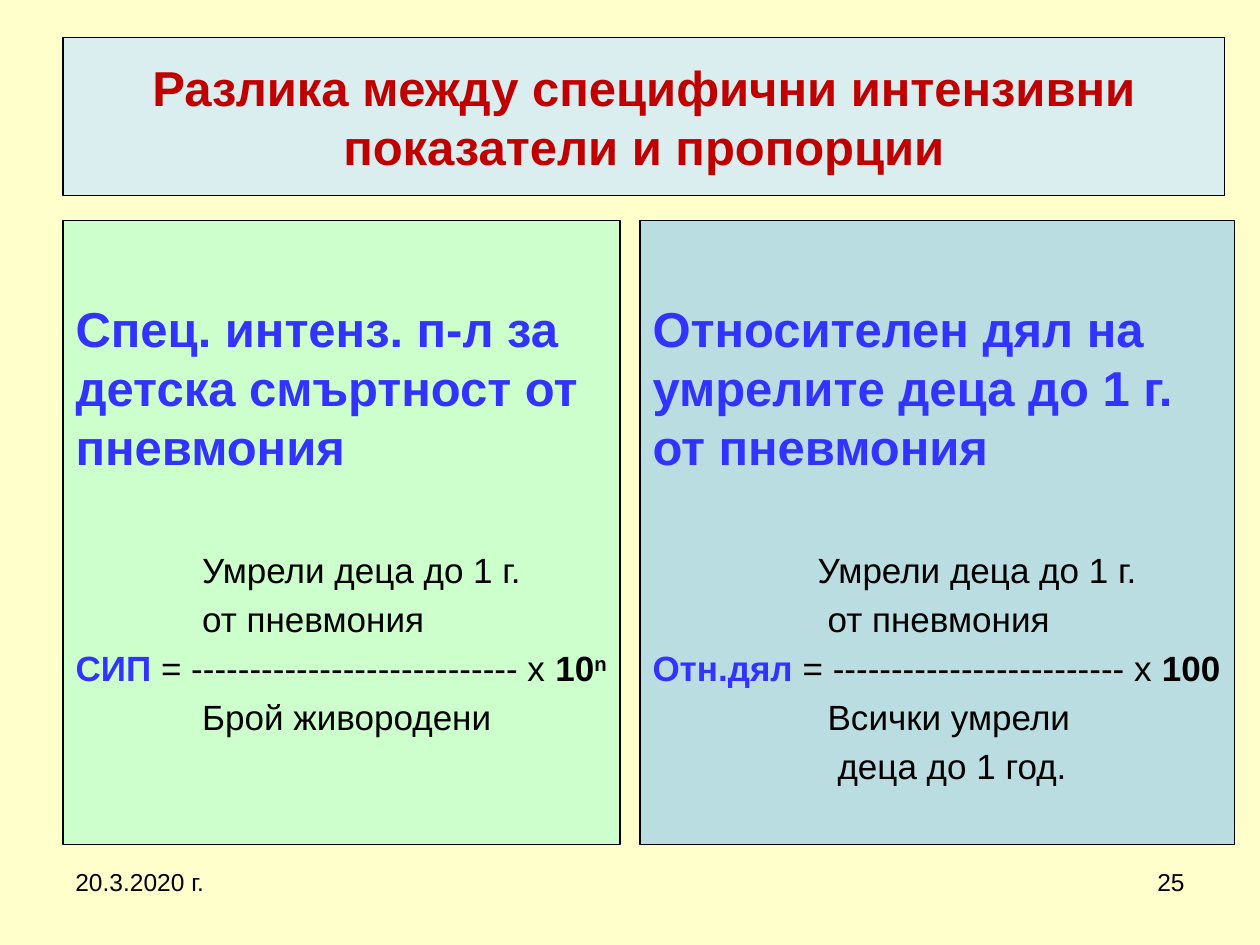
"""Build a slide comparing specific intensive rates with proportions."""
from lxml import etree
from pptx import Presentation
from pptx.dml.color import RGBColor
from pptx.enum.text import MSO_ANCHOR, MSO_AUTO_SIZE, PP_ALIGN
from pptx.oxml.ns import qn
from pptx.util import Cm, Pt

LEFT, CENTER, RIGHT = PP_ALIGN.LEFT, PP_ALIGN.CENTER, PP_ALIGN.RIGHT
TOP, MIDDLE = MSO_ANCHOR.TOP, MSO_ANCHOR.MIDDLE
NO_AUTOFIT = MSO_AUTO_SIZE.NONE
TWO_CONTENT_LAYOUT = 3

CREAM = RGBColor(0xFF, 0xFF, 0xCC)
PALE_BLUE = RGBColor(0xDA, 0xED, 0xEF)
GREEN = RGBColor(0xCC, 0xFF, 0xCC)
TEAL = RGBColor(0xBA, 0xDD, 0xE1)
RED = RGBColor(0xC0, 0x00, 0x00)
BLUE = RGBColor(0x33, 0x33, 0xFF)
BLACK = RGBColor(0x00, 0x00, 0x00)


def add_text(paragraph, text, size=20, color=BLACK, bold=False, superscript=False):
    run = paragraph.add_run()
    run.text = text
    font = run.font
    font.name, font.size, font.bold = "Arial", Pt(size), bold
    font.color.rgb = color
    if superscript:
        run._r.get_or_add_rPr().set("baseline", "30000")


class ComparisonSlide:
    def __init__(self, presentation):
        layout = presentation.slide_layouts[TWO_CONTENT_LAYOUT]
        self.slide = presentation.slides.add_slide(layout)
        self.slide.background.fill.solid()
        self.slide.background.fill.fore_color.rgb = CREAM

    def place(self, index, box, fill, anchor):
        shape = self.slide.placeholders[index]
        shape.left, shape.top, shape.width, shape.height = map(Cm, box)
        shape.fill.solid()
        shape.fill.fore_color.rgb = fill
        shape.line.color.rgb = BLACK
        shape.line.width = Pt(0.75)
        frame = shape.text_frame
        frame.word_wrap = True
        frame.auto_size = NO_AUTOFIT
        frame.vertical_anchor = anchor
        return frame

    def title(self, text, box):
        paragraph = self.place(0, box, PALE_BLUE, MIDDLE).paragraphs[0]
        paragraph.alignment = CENTER
        add_text(paragraph, text, size=28, color=RED, bold=True)

    def panel(self, index, box, fill, heading, formula):
        frame = self.place(index, box, fill, TOP)
        frame.margin_top = Cm(1.57)
        frame.margin_right = 0
        paragraph = self.line(frame.paragraphs[0], 0, 0)
        add_text(paragraph, heading, size=28, color=BLUE, bold=True)
        for number, (indent, runs) in enumerate(formula):
            space = 4 if number else 42
            paragraph = self.line(frame.add_paragraph(), indent, space)
            for text, style in runs:
                add_text(paragraph, text, **style)

    def line(self, paragraph, indent, space):
        paragraph.alignment = LEFT
        paragraph.space_before = Pt(space)
        properties = paragraph._p.get_or_add_pPr()
        properties.set("marL", str(Cm(indent)))
        properties.set("indent", "0")
        etree.SubElement(properties, qn("a:buNone"))
        return paragraph

    def footer(self, text, left, alignment):
        box = self.slide.shapes.add_textbox(Cm(left), Cm(17.35), Cm(5.92), Cm(1.32))
        box.text_frame.word_wrap = True
        paragraph = box.text_frame.paragraphs[0]
        paragraph.alignment = alignment
        add_text(paragraph, text, size=14)


def main():
    presentation = Presentation()
    presentation.slide_width, presentation.slide_height = Cm(25.4), Cm(19.05)
    term, strong = {"color": BLUE, "bold": True}, {"bold": True}
    power = {"bold": True, "superscript": True}

    rate_formula = [
        (2.55, [("Умрели деца до 1 г.", {})]),
        (2.55, [("от пневмония", {})]),
        (0, [("СИП", term), (" = " + "-" * 28 + " х", {}), (" 10", strong), ("n", power)]),
        (2.55, [("Брой живородени", {})]),
    ]
    share_formula = [
        (3.33, [("Умрели деца до 1 г.", {})]),
        (3.53, [("от пневмония", {})]),
        (0, [("Отн.дял", term), (" = " + "-" * 25 + " х ", {}), ("100", strong)]),
        (3.53, [("Всички умрели", {})]),
        (3.73, [("деца до 1 год.", {})]),
    ]

    comparison = ComparisonSlide(presentation)
    comparison.title("Разлика между специфични интензивни показатели и пропорции",
                     (1.27, 0.76, 23.42, 3.18))
    comparison.panel(1, (1.27, 4.45, 11.23, 12.57), GREEN,
                     "Спец. интенз. п-л за детска смъртност от пневмония", rate_formula)
    comparison.panel(2, (12.9, 4.45, 11.99, 12.57), TEAL,
                     "Относителен дял на умрелите деца до 1 г. от пневмония", share_formula)
    comparison.footer("25", 18.21, RIGHT)
    comparison.footer("20.3.2020 г.", 1.27, LEFT)
    presentation.save("out.pptx")


if __name__ == "__main__":
    main()
